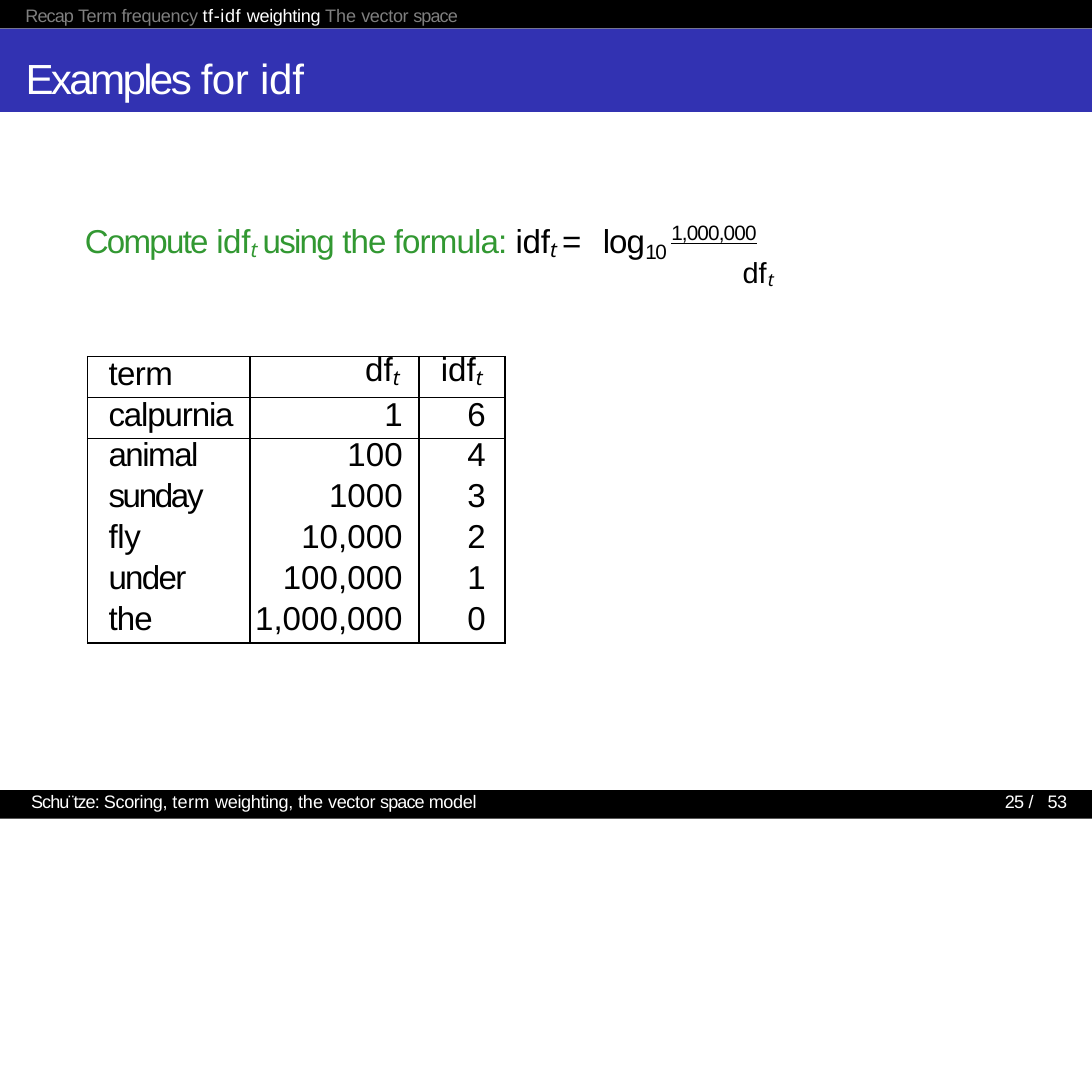
from lxml.etree import SubElement
from pptx import Presentation
from pptx.dml.color import RGBColor
from pptx.enum.shapes import MSO_SHAPE
from pptx.enum.text import MSO_ANCHOR, PP_ALIGN
from pptx.oxml.ns import qn
from pptx.util import Pt

COLORS = {"black": "000000", "white": "FFFFFF", "gray": "7F7F7F",
          "blue": "3232B2", "green": "329832"}
FONT, MATH_FONT = "Arial", "Noto Sans"
PAGE_SIZE = 363
SUBSCRIPT = dict(font=MATH_FONT, size=12, italic=True, base=-10)


def rgb(name):
    return RGBColor.from_string(COLORS[name])


def write(para, spans, size, color, align=PP_ALIGN.LEFT, line=None):
    """Fill a paragraph with (text, letter spacing, overrides) spans."""
    para.alignment = align
    if line:
        para.line_spacing = Pt(line)
    para.font.name, para.font.size = FONT, Pt(size)
    para.font.color.rgb = rgb(color)
    for text, spacing, style in spans:
        span = para.add_run()
        span.text = text
        if "font" in style:
            span.font.name = style["font"]
        if "size" in style:
            span.font.size = Pt(style["size"])
        if "color" in style:
            span.font.color.rgb = rgb(style["color"])
        if "italic" in style:
            span.font.italic = style["italic"]
        if "underline" in style:
            span.font.underline = style["underline"]
        properties = span.font._element
        properties.set("spc", str(round(spacing * 100)))
        if "base" in style:
            properties.set("baseline", str(style["base"] * 1000))


def set_frame(frame, left=0, top=0):
    frame.word_wrap = True
    frame.vertical_anchor = MSO_ANCHOR.TOP
    frame.margin_left, frame.margin_top = Pt(left), Pt(top)
    frame.margin_right = frame.margin_bottom = 0
    return frame.paragraphs[0]


def add_text(page, box, spans, size, color, inset=(0, 0), line=None):
    shape = page.shapes.add_textbox(*map(Pt, box))
    write(set_frame(shape.text_frame, *inset), spans, size, color, line=line)


def add_bar(page, box):
    bar = page.shapes.add_shape(MSO_SHAPE.RECTANGLE, *map(Pt, box))
    bar.shadow.inherit = False
    bar.fill.solid()
    bar.fill.fore_color.rgb = rgb("black")
    bar.line.fill.background()
    return bar


def add_navigation(page, box):
    bar = add_bar(page, box)
    active = dict(color="white")
    spans = [("Recap ", -0.3, {}), ("Term frequency ", -0.1, {}),
             ("tf-idf ", 0.2, active), ("weighting ", -0.1, active),
             ("The ", 0, {}), ("vector ", -0.1, {}), ("space", -0.3, {})]
    write(set_frame(bar.text_frame, 8.5, 1.3), spans, 6, "gray")


def add_title(page, box):
    title = page.shapes.title
    title.left, title.top, title.width, title.height = map(Pt, box)
    title.fill.solid()
    title.fill.fore_color.rgb = rgb("blue")
    spans = [("Examples ", -0.9, {}), ("for ", -0.2, {}), ("idf", -0.1, {})]
    write(set_frame(title.text_frame, 8.5, 7.8), spans, 14, "white")


def add_formula(page, box):
    left, top, width, height = box
    black = dict(color="black")
    raised = dict(color="black", size=12, base=35, underline=True)
    spans = [("Compute ", -0.6, {}), ("idf", -0.1, {}), ("t ", -0.1, SUBSCRIPT),
             ("using ", -0.6, {}), ("the formula: ", -0.3, {}),
             ("idf", -0.1, black), ("t ", -0.1, {**SUBSCRIPT, **black}),
             ("= ", 2, black), ("log", -0.3, black),
             ("10 ", -0.5, dict(color="black", size=12, base=-17)),
             ("1,000,000", -0.3, raised)]
    add_text(page, box, spans, 11, "green", (3, 1.7))
    # Denominator
    spans = [("d", -0.8, dict(base=5)), ("f", 0.4, dict(base=5)),
             ("t", -0.1, dict(font=MATH_FONT, size=6, italic=True))]
    add_text(page, (left + 221, top + 6.5, 16, height), spans, 16.5, "black", (0.7, 1.6))


def set_borders(cell, sides):
    properties = cell._tc.get_or_add_tcPr()
    for index, side in enumerate("LRTB"):
        edge = SubElement(properties, qn(f"a:ln{side}"), w=str(Pt(0.5)))
        if side in sides:
            fill = SubElement(edge, qn("a:solidFill"))
            SubElement(fill, qn("a:srgbClr"), val=COLORS["black"])
        else:
            SubElement(edge, qn("a:noFill"))
    SubElement(properties, qn("a:noFill"))


def add_idf_table(page, box):
    rows = [("calpurnia", -0.4, "1", "6"), ("animal", -0.5, "100", "4"),
            ("sunday", -0.8, "1000", "3"), ("fly", -0.1, "10,000", "2"),
            ("under", -0.6, "100,000", "1"), ("the", -0.3, "1,000,000", "0")]
    grid = [[[("term", -0.2, {})],
             [("df", 0, {}), ("t", 0, SUBSCRIPT)],
             [("idf", 0, {}), ("t", 0, SUBSCRIPT)]]]
    for term, spacing, *numbers in rows:
        grid.append([[(term, spacing, {})]] + [[(number, 0, {})] for number in numbers])

    table = page.shapes.add_table(len(grid), 3, *map(Pt, box)).table
    table.first_row = table.horz_banding = False
    for column, width in zip(table.columns, (54, 56.2, 28.6)):
        column.width = Pt(width)
    ruled_above = (0, 1, 2)
    last = len(grid) - 1
    for row, row_spans in enumerate(grid):
        table.rows[row].height = Pt(box[3] / len(grid))
        for col, spans in enumerate(row_spans):
            cell = table.cell(row, col)
            cell.margin_top = cell.margin_bottom = 0
            cell.margin_left = Pt(0 if col else 7)
            cell.margin_right = Pt((0, 5.4, 6.4)[col] + (col > 0 and row == 0))
            write(cell.text_frame.paragraphs[0], spans, 11, "black",
                  PP_ALIGN.RIGHT if col else PP_ALIGN.LEFT,
                  11.9 if row < 2 else 11.7)
            top = "T" if row in ruled_above else ""
            bottom = "B" if row == last or row + 1 in ruled_above else ""
            set_borders(cell, "LR" + top + bottom)


def add_footer(page, box):
    add_bar(page, box)
    left, top, width, height = box
    spans = [("Schu¨tze: ", -0.3, {}), ("Scoring, ", -0.1, {}), ("term ", 0.1, {}),
             ("weighting, ", -0.1, {}), ("the ", 0, {}), ("vector ", -0.1, {}),
             ("space ", -0.3, {}), ("model", -0.1, {})]
    add_text(page, (left + 9.4, top + 0.7, 156, 8), spans, 6, "white", (0.9, 0), 6.7)
    # Page number
    spans = [("25 ", -0.2, {}), ("/ ", 1.5, {}), ("53", -0.2, {})]
    add_text(page, (left + width - 31, top + 0.7, 23, 8), spans, 6, "white", (2, 0), 6.7)


def main():
    deck = Presentation()
    deck.slide_width = deck.slide_height = Pt(PAGE_SIZE)
    page = deck.slides.add_slide(deck.slide_layouts[5])
    add_navigation(page, (0, 0, PAGE_SIZE, 9.5))
    add_title(page, (0, 9.5, PAGE_SIZE, 27.7))
    add_formula(page, (25.2, 70.6, 247.7, 15))
    add_idf_table(page, (29.1, 118.5, 138.8, 95.4))
    add_footer(page, (0, 262.7, PAGE_SIZE, 9.5))
    deck.save("out.pptx")


if __name__ == "__main__":
    main()
